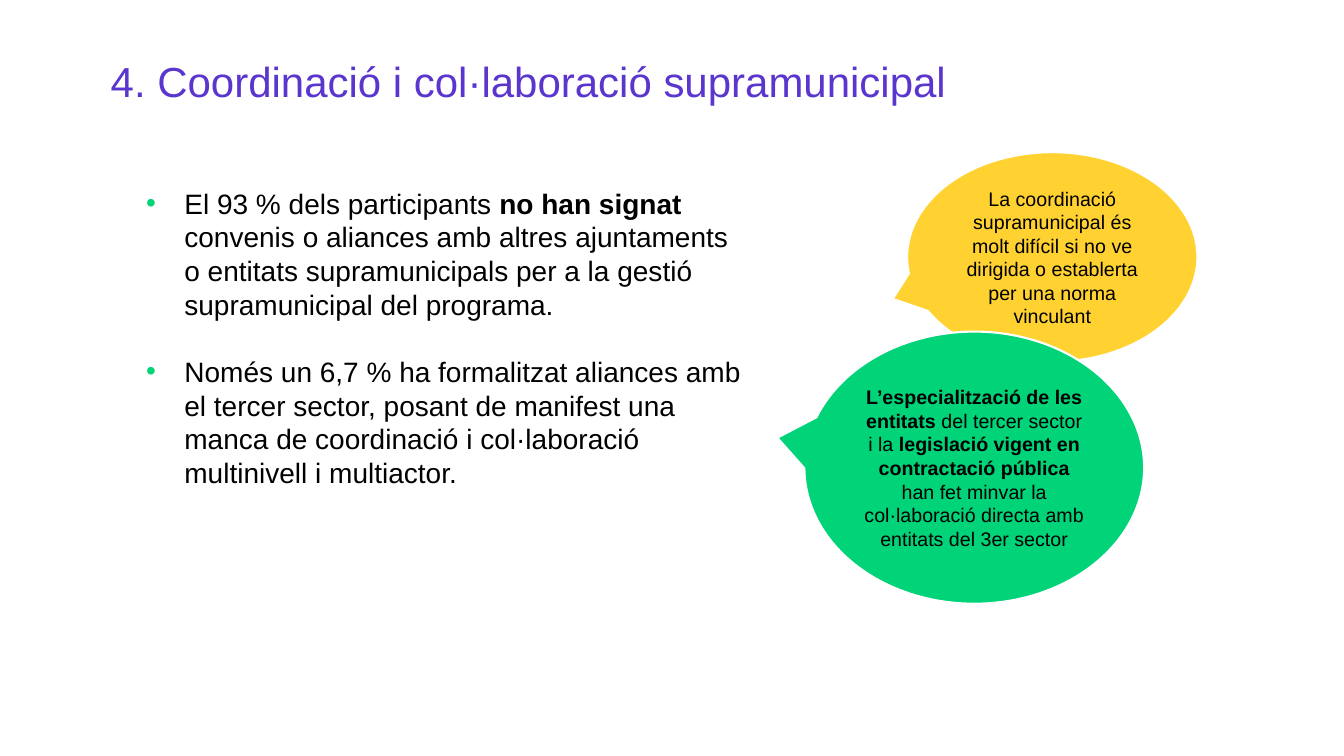
import pptx
import pptx.dml.color
import pptx.enum.shapes
import pptx.enum.text
import pptx.oxml
import pptx.oxml.ns
import pptx.util
from dataclasses import dataclass

Pt = pptx.util.Pt
Inches = pptx.util.Inches
ALIGN = pptx.enum.text.PP_ALIGN
ANCHOR = pptx.enum.text.MSO_ANCHOR


@dataclass(frozen=True)
class Theme:
    font: str = "Arial"
    text: str = "000000"
    title: str = "5A36CE"
    green: str = "00D378"
    yellow: str = "FFD232"
    outline: str = "FFFFFF"
    title_size: int = 30
    body_size: int = 20
    callout_size: int = 14
    body_line: int = 24


THEME = Theme()
WIDTH, HEIGHT = Inches(13.333), Inches(7.5)


def rgb(value):
    return pptx.dml.color.RGBColor.from_string(value)


def area(left, top, width, height):
    """Turn percentages of the slide into lengths."""
    return [round(share * full / 100) for share, full in
            ((left, WIDTH), (top, HEIGHT), (width, WIDTH), (height, HEIGHT))]


def write(p, text, size, color=THEME.text, align=None, spacing=None, before=None):
    """Fill a paragraph; parts between ** marks are bold."""
    p.alignment, p.line_spacing, p.space_before = align, spacing, before
    for i, part in enumerate(text.split("**")):
        if part:
            r = p.add_run()
            r.text = part
            r.font.name, r.font.size = THEME.font, Pt(size)
            r.font.bold = i % 2 == 1
            r.font.color.rgb = rgb(color)


def add_bullet(p, color, indent):
    pPr = p._p.get_or_add_pPr()
    pPr.set("marL", str(indent))
    pPr.set("indent", str(-indent))
    ns = pptx.oxml.ns.nsdecls("a")
    for xml in (f'<a:buClr {ns}><a:srgbClr val="{color}"/></a:buClr>',
                f'<a:buFont {ns} typeface="{THEME.font}"/>',
                f'<a:buChar {ns} char="•"/>'):
        pPr.append(pptx.oxml.parse_xml(xml))


def text_frame(s, box):
    tf = s.shapes.add_textbox(*box).text_frame
    tf.word_wrap = True
    return tf


def add_title(s, box, text):
    write(text_frame(s, box).paragraphs[0], text, THEME.title_size,
          color=THEME.title, spacing=0.9)


def add_bullets(s, box, items):
    tf = text_frame(s, box)
    line = Pt(THEME.body_line)
    for i, item in enumerate(items):
        p = tf.add_paragraph() if i else tf.paragraphs[0]
        write(p, item, THEME.body_size, spacing=line, before=line if i else None)
        add_bullet(p, THEME.green, Inches(0.38))


def add_callout(s, box, text, fill, tail):
    """Speech bubble; tail is its tip, in shares of the box from the centre."""
    sp = s.shapes.add_shape(
        pptx.enum.shapes.MSO_SHAPE.OVAL_CALLOUT, *box)
    sp.shadow.inherit = False
    sp.adjustments[0], sp.adjustments[1] = tail
    sp.fill.solid()
    sp.fill.fore_color.rgb = rgb(fill)
    sp.line.color.rgb = rgb(THEME.outline)
    sp.line.width = Pt(1.5)
    tf = sp.text_frame
    tf.word_wrap = True
    tf.vertical_anchor = ANCHOR.MIDDLE
    write(tf.paragraphs[0], text, THEME.callout_size, align=ALIGN.CENTER)


def main():
    prs = pptx.Presentation()
    prs.slide_width, prs.slide_height = WIDTH, HEIGHT
    s = prs.slides.add_slide(prs.slide_layouts[6])

    # Findings
    add_bullets(s, area(10.13, 24, 45.83, 48), [
        "El 93 % dels participants **no han signat** convenis o aliances amb altres "
        "ajuntaments o entitats supramunicipals per a la gestió supramunicipal "
        "del programa.",
        "Només un 6,7 % ha formalitzat aliances amb el tercer sector, posant de "
        "manifest una manca de coordinació i col·laboració multinivell i multiactor.",
    ])

    # Speech bubbles, the green one in front
    add_callout(s, area(67.5, 20.13, 21.6, 27.73),
                "La coordinació supramunicipal és molt difícil si no ve dirigida o "
                "establerta per una norma vinculant",
                THEME.yellow, (-0.55, 0.2))
    add_callout(s, area(59.85, 43.87, 25.28, 36),
                "**L’especialització de les entitats **del tercer sector i la "
                "**legislació vigent en contractació pública **han fet minvar la "
                "col·laboració directa amb entitats del 3er sector",
                THEME.green, (-0.58, -0.11))

    # Title
    add_title(s, area(7.5, 7.47, 66.68, 10.93),
              "4. Coordinació i col·laboració supramunicipal")

    prs.save("out.pptx")


if __name__ == "__main__":
    main()
